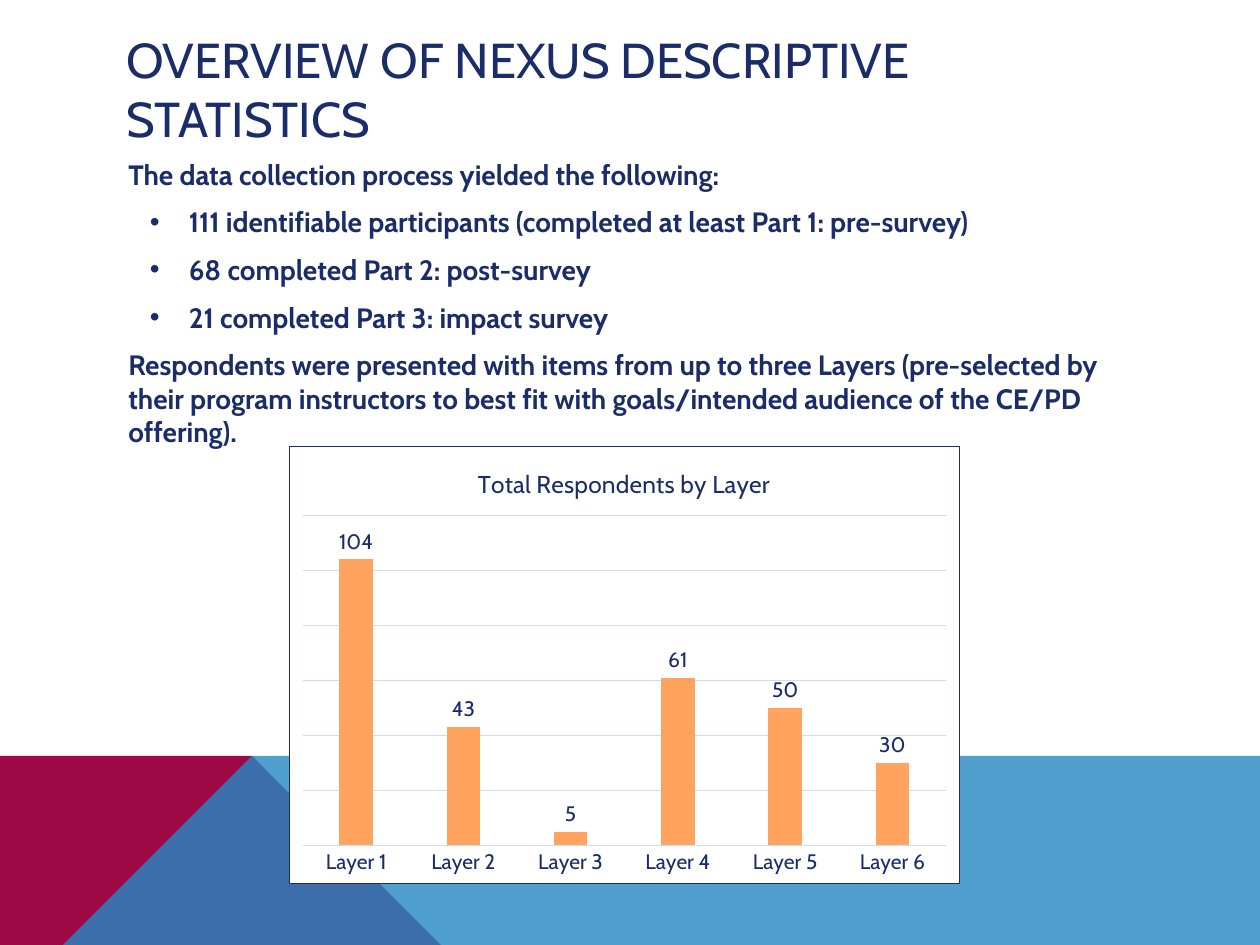
from lxml import etree
from pptx import Presentation
from pptx import util as u
from pptx.chart import data as cd
from pptx.dml.color import RGBColor
from pptx.enum import chart as ce, text as te
from pptx.oxml import parse_xml
from pptx.oxml.ns import nsdecls, qn

THEME = {
    "font": "Cabin", "ink": "1A2D68", "grid": "D1DAF4", "bar": "FFA35F",
    "paper": "FFFFFF", "wine": "9E0847", "blue": "2388C4",
    "head": 28, "body": 16, "chart": 14, "label": 12, "line": 0.75,
}
TITLE = "OVERVIEW OF NEXUS DESCRIPTIVE STATISTICS"
BODY = [
    (False, "The data collection process yielded the following:"),
    (True, "111 identifiable participants (completed at least Part 1: pre-survey)"),
    (True, "68 completed Part 2: post-survey"),
    (True, "21 completed Part 3: impact survey"),
    (False, "Respondents were presented with items from up to three Layers "
            "(pre-selected by their program instructors to best fit with "
            "goals/intended audience of the CE/PD offering)."),
]
COUNTS = [104, 43, 5, 61, 50, 30]
BANDS = [
    ("wine", 100, [(0, 7.5), (0, 5.52), (2.23, 5.52), (3.91, 7.5)]),
    ("blue", 80, [(0, 7.5), (2.23, 5.52), (10, 5.53), (10, 7.5)]),
]
BOXES = {
    "title": (0.9, 0.4, 8.22, 0.6),
    "body": (0.9, 1.2, 8.22, 2.34),
    "chart": (2.29, 3.54, 5.33, 3.48),
}


def put(obj, **vals):
    for key, val in vals.items():
        setattr(obj, key, val)


def box(name):
    return [u.Inches(n) for n in BOXES[name]]


def color(name):
    return RGBColor.from_string(THEME[name])


def style(font, size, bold=False):
    put(font, name=THEME["font"], size=u.Pt(THEME[size]), bold=bold)
    font.color.rgb = color("ink")


def rule(line):
    line.color.rgb = color("grid")
    line.width = u.Pt(THEME["line"])


def add_band(slide, name, alpha, pts):
    pen = slide.shapes.build_freeform(*pts[0], scale=u.Inches(1))
    pen.add_line_segments(pts[1:], close=True)
    band = pen.convert_to_shape()
    band.shadow.inherit = False
    band.fill.solid()
    band.fill.fore_color.rgb = color(name)
    band.line.fill.background()
    if alpha < 100:
        tint = band.fill._xPr.find(".//" + qn("a:srgbClr"))
        etree.SubElement(tint, qn("a:alpha"), val=str(alpha * 1000))


def add_title(slide):
    head = slide.shapes.title
    put(head, **dict(zip(("left", "top", "width", "height"), box("title"))))
    frame = head.text_frame
    put(frame, text=TITLE, word_wrap=True,
        auto_size=te.MSO_AUTO_SIZE.NONE,
        vertical_anchor=te.MSO_ANCHOR.MIDDLE)
    para = frame.paragraphs[0]
    para.alignment = te.PP_ALIGN.LEFT
    style(para.runs[0].font, "head")


def add_body(slide):
    frame = slide.shapes.add_textbox(*box("body")).text_frame
    frame.word_wrap = True
    for i, (mark, words) in enumerate(BODY):
        para = frame.paragraphs[0] if i == 0 else frame.add_paragraph()
        para.space_before = u.Pt(8)
        run = para.add_run()
        run.text = words
        style(run.font, "body", True)
        left, hang = (0.5, -0.31) if mark else (0.02, 0)
        props = para._p.get_or_add_pPr()
        props.set("marL", str(u.Inches(left)))
        props.set("indent", str(u.Inches(hang)))
        if mark:
            etree.SubElement(props, qn("a:buFont"), typeface="Arial")
            etree.SubElement(props, qn("a:buChar"), char="•")


def add_chart(slide):
    data = cd.CategoryChartData()
    data.categories = [f"Layer {n}" for n in range(1, len(COUNTS) + 1)]
    data.add_series("Series 1", COUNTS)
    chart = slide.shapes.add_chart(
        ce.XL_CHART_TYPE.COLUMN_CLUSTERED, *box("chart"), data).chart
    style(chart.font, "label")
    put(chart, has_legend=False, has_title=True)
    frame = chart.chart_title.text_frame
    frame.text = "Total Respondents by Layer"
    style(frame.paragraphs[0].runs[0].font, "chart")
    chart.chart_title.include_in_layout = False

    none = ce.XL_TICK_MARK.NONE
    cats, vals = chart.category_axis, chart.value_axis
    put(cats, major_tick_mark=none, minor_tick_mark=none)
    style(cats.tick_labels.font, "label")
    rule(cats.format.line)
    put(vals, visible=False, has_major_gridlines=True,
        minimum_scale=0, maximum_scale=120, major_unit=20)
    rule(vals.major_gridlines.format.line)

    plot = chart.plots[0]
    put(plot, gap_width=219, overlap=-27, vary_by_categories=False,
        has_data_labels=True)
    tags = plot.data_labels
    put(tags, show_value=True, position=ce.XL_LABEL_POSITION.OUTSIDE_END)
    style(tags.font, "label")
    fill = plot.series[0].format.fill
    fill.solid()
    fill.fore_color.rgb = color("bar")

    frame_xml = (
        f'<c:spPr {nsdecls("c", "a")}>'
        f'<a:solidFill><a:srgbClr val="{THEME["paper"]}"/></a:solidFill>'
        f'<a:ln w="{u.Pt(THEME["line"])}"><a:solidFill>'
        f'<a:srgbClr val="{THEME["ink"]}"/></a:solidFill></a:ln></c:spPr>')
    chart._chartSpace.find(qn("c:chart")).addnext(parse_xml(frame_xml))


def main():
    deck = Presentation()
    put(deck, slide_width=u.Inches(10), slide_height=u.Inches(7.5))
    slide = deck.slides.add_slide(deck.slide_layouts[5])
    for band in BANDS:
        add_band(slide, *band)
    add_title(slide)
    add_body(slide)
    add_chart(slide)
    deck.save("out.pptx")


if __name__ == "__main__":
    main()
